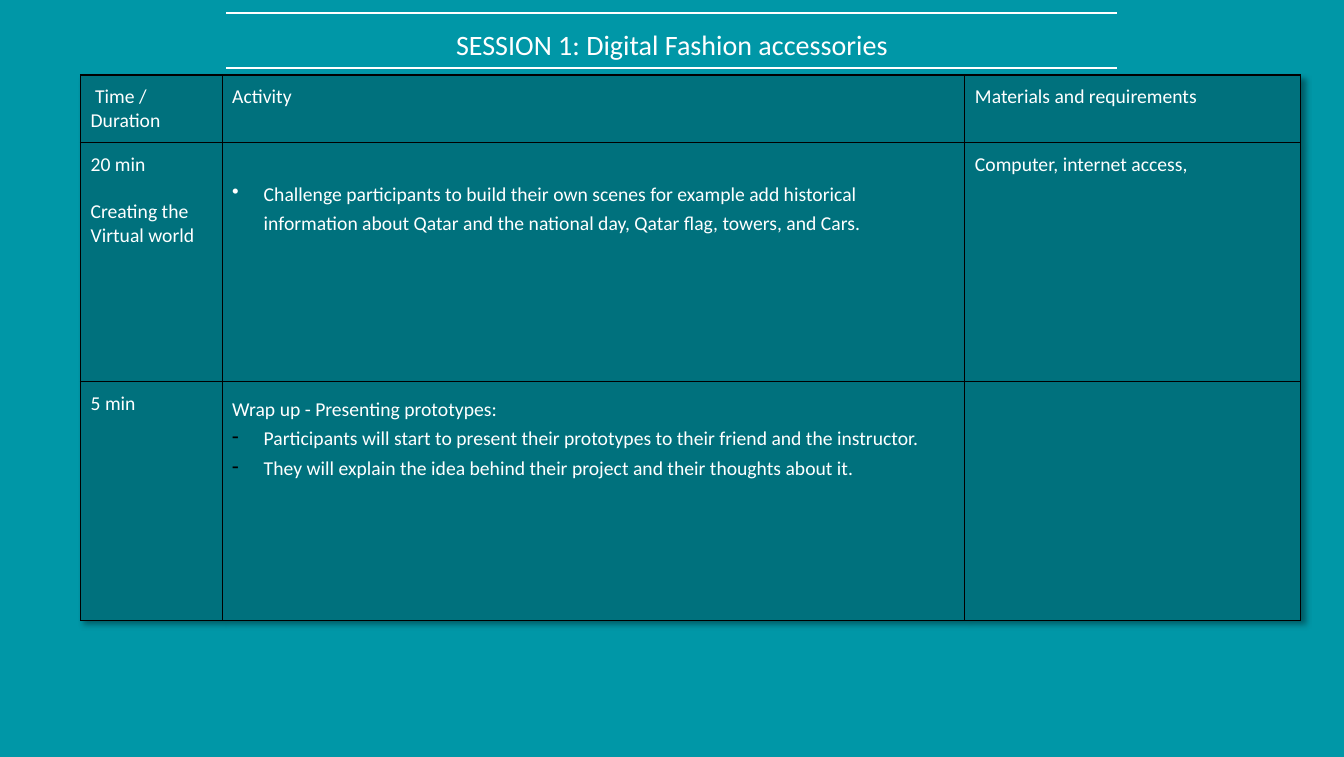
"""Builds the session plan slide with its title, rules and timetable."""
from lxml.etree import SubElement
from pptx import Presentation
from pptx.dml.color import RGBColor
from pptx.enum.shapes import MSO_CONNECTOR
from pptx.enum.text import PP_ALIGN
from pptx.oxml import parse_xml
from pptx.oxml.ns import nsdecls, qn
from pptx.util import Pt

WHITE, BLACK, TEAL, DARK_TEAL = "FFFFFF", "000000", "0097A7", "00717D"
HANGING = {"left": 22.5, "indent": -22.5}


def color(value):
    return RGBColor.from_string(value)


def apply(target, values):
    for name, value in values.items():
        setattr(target, name, value)


def line(text, left=0, indent=0, bullet=None, bullet_color=WHITE, **values):
    return {"text": text, "left": left, "indent": indent, "bullet": bullet,
            "bullet_color": bullet_color, "values": values}


class SessionSlide:
    def __init__(self, presentation, font_name="Calibri"):
        self.font_name = font_name
        self.slide = presentation.slides.add_slide(presentation.slide_layouts[6])
        fill = self.slide.background.fill
        fill.solid()
        fill.fore_color.rgb = color(TEAL)

    def paragraphs(self, frame, lines, size):
        for index, item in enumerate(lines):
            paragraph = frame.paragraphs[0] if index == 0 else frame.add_paragraph()
            apply(paragraph, item["values"])
            properties = paragraph._p.get_or_add_pPr()
            properties.set("marL", str(Pt(item["left"])))
            properties.set("indent", str(Pt(item["indent"])))
            if item["bullet"]:
                bullet_color = SubElement(properties, qn("a:buClr"))
                SubElement(bullet_color, qn("a:srgbClr"), val=item["bullet_color"])
                SubElement(properties, qn("a:buChar"), char=item["bullet"])
            run = paragraph.add_run()
            run.text = item["text"]
            apply(run.font, {"name": self.font_name, "size": Pt(size)})
            run.font.color.rgb = color(WHITE)

    def title(self, text, left, top, width, height, size):
        shape = self.slide.shapes.add_textbox(Pt(left), Pt(top), Pt(width), Pt(height))
        sides = ("left", "top", "right", "bottom")
        apply(shape.text_frame, {f"margin_{side}": Pt(9.4) for side in sides})
        shape.text_frame.word_wrap = True
        self.paragraphs(shape.text_frame, [line(text, alignment=PP_ALIGN.CENTER)], size)

    def rule(self, left, right, top):
        connector = self.slide.shapes.add_connector(
            MSO_CONNECTOR.STRAIGHT, Pt(left), Pt(top), Pt(right), Pt(top))
        connector.line.color.rgb = color(WHITE)
        connector.line.width = Pt(1.5)
        SubElement(connector._element.spPr, qn("a:effectLst"))

    def cell(self, cell, lines, top_margin):
        apply(cell, {"margin_left": Pt(7.2), "margin_right": Pt(7.2),
                     "margin_top": Pt(top_margin), "margin_bottom": Pt(7.2)})
        cell.fill.solid()
        cell.fill.fore_color.rgb = color(DARK_TEAL)
        properties = cell._tc.get_or_add_tcPr()
        for index, side in enumerate(("lnL", "lnR", "lnT", "lnB")):
            properties.insert(index, parse_xml(
                f'<a:{side} {nsdecls("a")} w="{Pt(1)}"><a:solidFill>'
                f'<a:srgbClr val="{BLACK}"/></a:solidFill></a:{side}>'))
        self.paragraphs(cell.text_frame, lines, 14)

    def table(self, left, top, widths, heights, rows, top_margins):
        shape = self.slide.shapes.add_table(
            len(heights), len(widths), Pt(left), Pt(top), Pt(sum(widths)), Pt(sum(heights)))
        table = shape.table
        apply(table, {"first_row": False, "horz_banding": False})
        table._tbl.tblPr.insert(0, parse_xml(
            f'<a:effectLst {nsdecls("a")}><a:outerShdw blurRad="{Pt(4)}" dist="{Pt(4)}" '
            f'dir="2700000" algn="tl" rotWithShape="0"><a:srgbClr val="{BLACK}">'
            '<a:alpha val="40000"/></a:srgbClr></a:outerShdw></a:effectLst>'))
        for column, width in zip(table.columns, widths):
            column.width = Pt(width)
        for row_index, (height, row) in enumerate(zip(heights, rows)):
            table.rows[row_index].height = Pt(height)
            for column_index, lines in enumerate(row):
                margin = top_margins.get((row_index, column_index), 7.2)
                self.cell(table.cell(row_index, column_index), lines, margin)


def main():
    presentation = Presentation()
    apply(presentation, {"slide_width": Pt(959), "slide_height": Pt(540)})
    session = SessionSlide(presentation)
    session.title("SESSION 1: Digital Fashion accessories", 152.5, 10, 654, 67.5, 20)
    for top in (9.3, 48.3):
        session.rule(161.3, 797, top)
    dash = {**HANGING, "bullet": "-", "bullet_color": BLACK, "line_spacing": 1.25}
    rows = [
        [[line("Time / Duration", indent=3.2)], [line("Activity")],
         [line("Materials and requirements")]],
        [[line("20 min"), line("Creating the Virtual world", space_before=Pt(17))],
         [line("Challenge participants to build their own scenes for example add historical "
               "information about Qatar and the national day, Qatar flag, towers, and Cars.",
               **HANGING, bullet="•", line_spacing=1.25)],
         [line("Computer, internet access,")]],
        [[line("5 min")],
         [line("Wrap up - Presenting prototypes:", line_spacing=1.25),
          line("Participants will start to present their prototypes to their friend "
               "and the instructor.", **dash),
          line("They will explain the idea behind their project and their thoughts "
               "about it.", **dash)],
         []],
    ]
    session.table(57.5, 53.5, (101, 530, 239.5), (48, 170.5, 170.5), rows, {(1, 1): 24.3})
    presentation.save("out.pptx")


if __name__ == "__main__":
    main()
